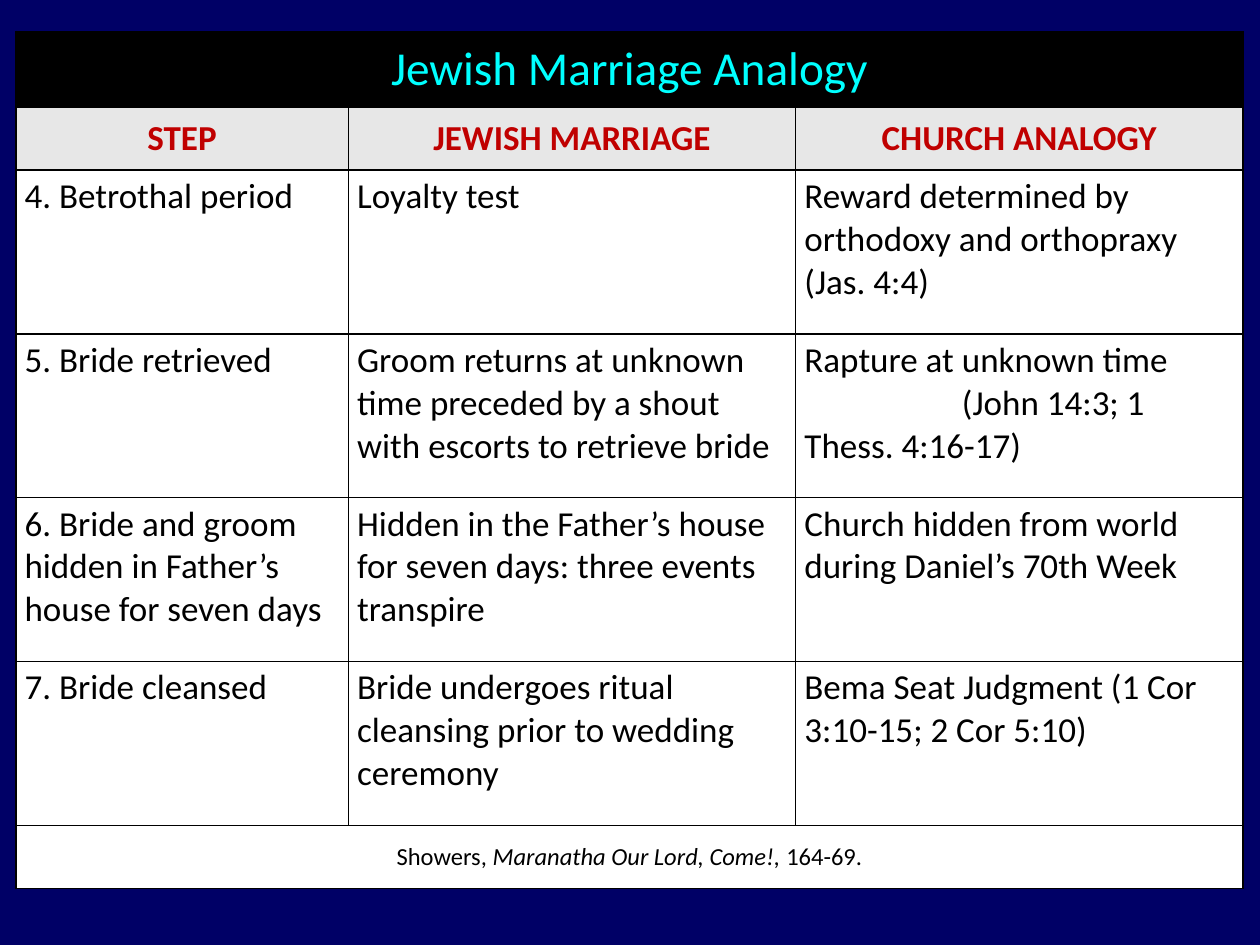
from dataclasses import dataclass

from lxml.etree import SubElement
from pptx import Presentation
from pptx.dml.color import RGBColor as Color
from pptx.enum.text import MSO_ANCHOR as Anchor, PP_ALIGN as Align
from pptx.oxml.ns import qn
from pptx.util import Inches, Pt


@dataclass(frozen=True)
class Theme:
    font: str = "Calibri"
    background: str = "000066"
    title_fill: str = "000000"
    title_text: str = "00FFFF"
    header_fill: str = "E7E7E7"
    header_text: str = "C00000"
    body_fill: str = "FFFFFF"
    body_text: str = "000000"
    border: str = "000000"
    border_width: int = 1
    title_size: int = 27
    body_size: int = 20
    source_size: int = 14


THEME = Theme()
UNIT = Inches(0.1)
LEFT, TOP = 1.25, 2.5
COLUMNS = [26.4, 35.5, 35.5]
ROWS = [6, 5, 13, 13, 13, 13, 5]
VERSE_INDENT = 12.5

TITLE = "Jewish Marriage Analogy"
HEADERS = ["STEP", "JEWISH MARRIAGE", "CHURCH ANALOGY"]
STEPS = [
    ["4. Betrothal period", "Loyalty test",
     "Reward determined by orthodoxy and orthopraxy (Jas. 4:4)"],
    ["5. Bride retrieved",
     "Groom returns at unknown time preceded by a shout with escorts to retrieve bride",
     "Rapture at unknown time\n(John 14:3; 1 Thess. 4:16-17)"],
    ["6. Bride and groom hidden in Father’s house for seven days",
     "Hidden in the Father’s house for seven days: three events transpire",
     "Church hidden from world during Daniel’s 70th Week"],
    ["7. Bride cleansed",
     "Bride undergoes ritual cleansing prior to wedding ceremony",
     "Bema Seat Judgment (1 Cor 3:10-15; 2 Cor 5:10)"],
]
SOURCE = ["Showers, ", "Maranatha Our Lord, Come!, ", "164-69."]


def grid(count):
    return int(count * UNIT)


def add_borders(cell):
    properties = cell._tc.get_or_add_tcPr()
    for side in ("lnL", "lnR", "lnT", "lnB"):
        line = SubElement(properties, qn(f"a:{side}"), w=str(Pt(THEME.border_width)))
        fill = SubElement(line, qn("a:solidFill"))
        SubElement(fill, qn("a:srgbClr"), val=THEME.border)


def prepare_cell(cell, fill):
    cell.margin_left = cell.margin_right = Inches(0.07)
    cell.margin_top = cell.margin_bottom = Inches(0.04)
    add_borders(cell)
    cell.fill.solid()
    cell.fill.fore_color.rgb = Color.from_string(fill)


def format_text(cell, color, size, bold=False, centered=False):
    cell.vertical_anchor = Anchor.MIDDLE if centered else Anchor.TOP
    for paragraph in cell.text_frame.paragraphs:
        paragraph.alignment = Align.CENTER if centered else Align.LEFT
        for run in paragraph.runs:
            run.font.name = THEME.font
            run.font.size = Pt(size)
            run.font.bold = bold
            run.font.color.rgb = Color.from_string(color)


def indent_verse(cell):
    for paragraph in cell.text_frame.paragraphs[1:]:
        properties = paragraph._p.get_or_add_pPr()
        properties.set("marL", "0")
        properties.set("indent", str(grid(VERSE_INDENT)))


def add_grid_table(slide):
    frame = slide.shapes.add_table(
        len(ROWS), len(COLUMNS), grid(LEFT), grid(TOP), grid(sum(COLUMNS)), grid(sum(ROWS)))
    table = frame.table
    for column, width in zip(table.columns, COLUMNS):
        column.width = grid(width)
    for row, height in zip(table.rows, ROWS):
        row.height = grid(height)
    return table


def fill_row(table, row, texts, fill, **style):
    for column, text in enumerate(texts):
        cell = table.cell(row, column)
        prepare_cell(cell, fill)
        cell.text_frame.text = text
        format_text(cell, **style)
        indent_verse(cell)


def merge_row(table, row, fill):
    last = len(COLUMNS) - 1
    for column in range(len(COLUMNS)):
        prepare_cell(table.cell(row, column), fill)
    cell = table.cell(row, 0)
    cell.merge(table.cell(row, last))
    return cell


def add_title(table):
    cell = merge_row(table, 0, THEME.title_fill)
    cell.text_frame.text = TITLE
    format_text(cell, THEME.title_text, THEME.title_size, centered=True)


def add_source(table):
    cell = merge_row(table, len(ROWS) - 1, THEME.body_fill)
    paragraph = cell.text_frame.paragraphs[0]
    for text in SOURCE:
        paragraph.add_run().text = text
    format_text(cell, THEME.body_text, THEME.source_size, centered=True)
    paragraph.runs[1].font.italic = True


def main():
    presentation = Presentation()
    presentation.slide_width, presentation.slide_height = grid(100), grid(75)
    slide = presentation.slides.add_slide(presentation.slide_layouts[6])
    slide.background.fill.solid()
    slide.background.fill.fore_color.rgb = Color.from_string(THEME.background)
    table = add_grid_table(slide)
    add_title(table)
    fill_row(table, 1, HEADERS, THEME.header_fill, color=THEME.header_text,
             size=THEME.body_size, bold=True, centered=True)
    for row, texts in enumerate(STEPS, start=2):
        fill_row(table, row, texts, THEME.body_fill,
                 color=THEME.body_text, size=THEME.body_size)
    add_source(table)
    presentation.save("out.pptx")


if __name__ == "__main__":
    main()
